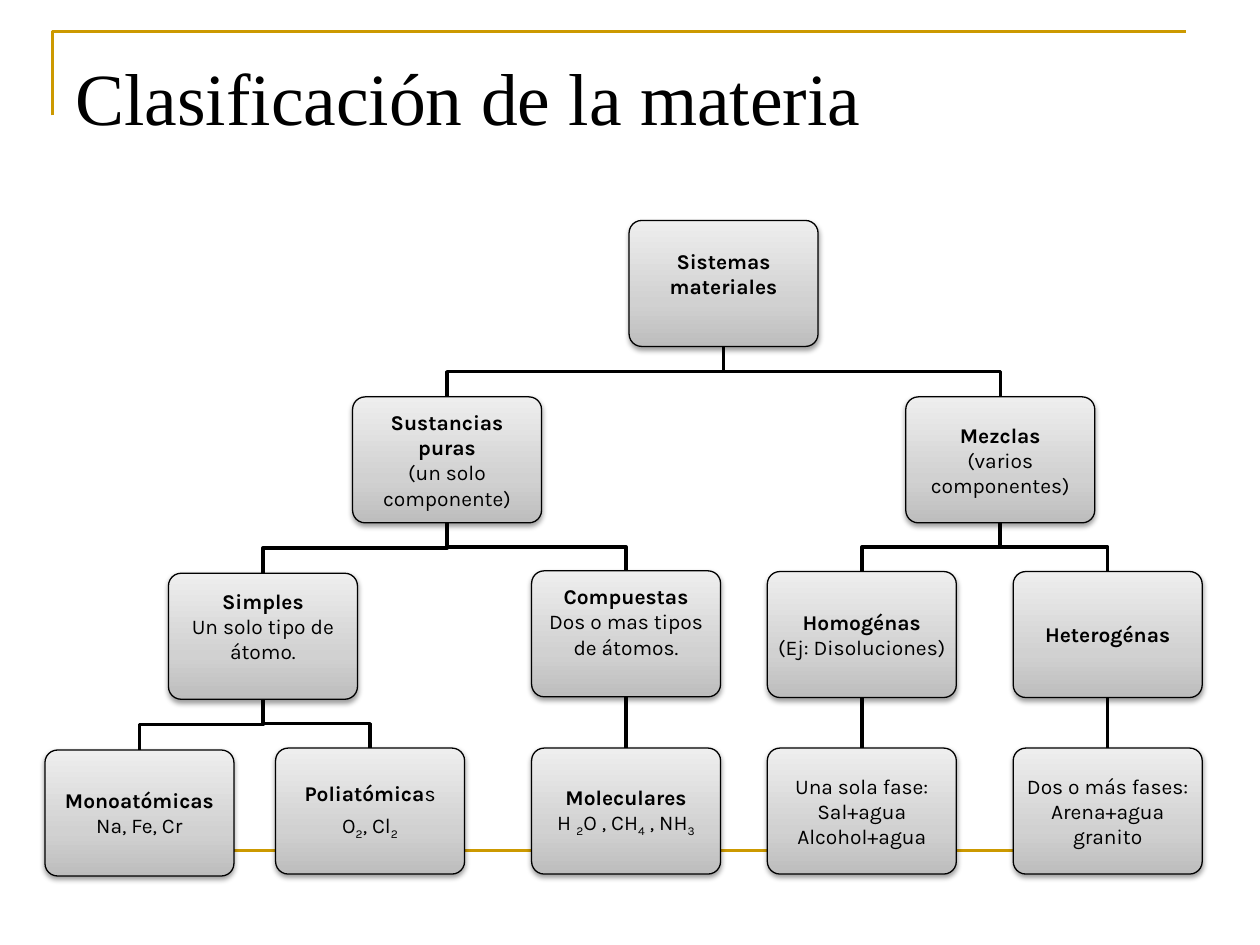
from lxml import etree
from pptx import Presentation
from pptx.dml.color import RGBColor
from pptx.enum.shapes import MSO_CONNECTOR, MSO_SHAPE
from pptx.enum.text import MSO_ANCHOR, PP_ALIGN
from pptx.oxml import parse_xml
from pptx.oxml.ns import nsdecls, qn
from pptx.util import Pt

STRAIGHT = MSO_CONNECTOR.STRAIGHT
ROUNDED = MSO_SHAPE.ROUNDED_RECTANGLE
MIDDLE = MSO_ANCHOR.MIDDLE
TOP = MSO_ANCHOR.TOP
CENTER = PP_ALIGN.CENTER

BLACK = RGBColor(0x00, 0x00, 0x00)
GOLD = RGBColor(0xCC, 0x99, 0x00)
GRAYS = [(0, RGBColor(0xBD, 0xBD, 0xBD)),
         (35, RGBColor(0xD1, 0xD1, 0xD1)),
         (100, RGBColor(0xEE, 0xEE, 0xEE))]

BOX_W, BOX_H = 108, 72
PAD = 3.6

# name: (parent, center x, top, lines, extra space below, spread lines)
# *...* marks bold text, _ puts the next character in subscript
TREE = {
    "sistemas": (None, 413.5, 126, ["*Sistemas materiales*"], 11.5, False),
    "puras": ("sistemas", 255.5, 226.8,
              ["*Sustancias puras*", "(un solo componente)"], 0, False),
    "simples": ("puras", 150.3, 327.6,
                ["*Simples*", "Un solo tipo de átomo."], 11.5, False),
    "monoatomicas": ("simples", 79.7, 428.6,
                     ["*Monoatómicas*", "Na, Fe, Cr"], 0, False),
    "poliatomicas": ("simples", 211.5, 427.5,
                     ["*Poliatómica*s", "O_2, Cl_2"], 0, True),
    "compuestas": ("puras", 357.8, 326.2,
                   ["*Compuestas*", "Dos o mas tipos de átomos."], 14, False),
    "moleculares": ("compuestas", 357.8, 427.5,
                    ["*Moleculares*", "H _2O , CH_4 , NH_3"], 0, False),
    "mezclas": ("sistemas", 571.6, 226.8,
                ["*Mezclas*", "(varios componentes)"], 0, False),
    "homogeneas": ("mezclas", 492.5, 326.6,
                   ["*Homogénas*", "(Ej: Disoluciones)"], 0, False),
    "una_fase": ("homogeneas", 492.5, 427.5,
                 ["Una sola fase:", "Sal+agua", "Alcohol+agua"], 0, False),
    "heterogeneas": ("mezclas", 633, 326.6, ["*Heterogénas*"], 0, False),
    "dos_fases": ("heterogeneas", 633, 427.5,
                  ["Dos o más fases:", "Arena+agua", "granito"], 0, False),
}


class Diagram:
    title_font = "Times New Roman"
    box_font = "Karla"

    def __init__(self, slide):
        self.slide = slide
        self.shapes = slide.shapes

    def line(self, points, color, width):
        """Straight connector for two points, open outline for more."""
        if len(points) == 2:
            ends = [Pt(v) for point in points for v in point]
            stroke = self.shapes.add_connector(STRAIGHT, *ends)
            etree.SubElement(stroke._element.spPr, qn("a:effectLst"))
        else:
            start, *rest = [(Pt(x), Pt(y)) for x, y in points]
            outline = self.shapes.build_freeform(*start)
            outline.add_line_segments(rest, close=False)
            stroke = outline.convert_to_shape()
            stroke.fill.background()
            stroke.shadow.inherit = False
        stroke.line.color.rgb = color
        stroke.line.width = Pt(width)

    def link(self, parent, child):
        """Branch from the bottom of one box to the top of another."""
        x1, y1 = parent[1], parent[2] + BOX_H
        x2, y2 = child[1], child[2]
        middle = (y1 + y2) / 2
        bend = [] if x1 == x2 else [(x1, middle), (x2, middle)]
        self.line([(x1, y1), *bend, (x2, y2)], BLACK, 2)

    def title(self, text, left, top, width, height):
        heading = self.shapes.add_textbox(Pt(left), Pt(top), Pt(width), Pt(height))
        frame = heading.text_frame
        frame.word_wrap = True
        frame.vertical_anchor = TOP
        frame.margin_top = Pt(8)
        paragraph = frame.paragraphs[0]
        paragraph.text = text
        paragraph.font.name = self.title_font
        paragraph.font.size = Pt(42)
        paragraph.font.color.rgb = BLACK

    def box(self, center, top, lines, space_below, spread):
        box = self.shapes.add_shape(ROUNDED, Pt(center - BOX_W / 2), Pt(top),
                                    Pt(BOX_W), Pt(BOX_H))
        box.adjustments[0] = 0.1
        self.shade(box)
        box.line.color.rgb = BLACK
        box.line.width = Pt(0.75)
        frame = box.text_frame
        frame.word_wrap = True
        frame.vertical_anchor = MIDDLE
        frame.margin_left = frame.margin_right = frame.margin_top = Pt(PAD)
        frame.margin_bottom = Pt(PAD + space_below)
        for i, text in enumerate(lines):
            paragraph = frame.add_paragraph() if i else frame.paragraphs[0]
            paragraph.alignment = CENTER
            paragraph.font.name = self.box_font
            paragraph.font.size = Pt(12)
            paragraph.font.color.rgb = BLACK
            if spread:
                paragraph.line_spacing = 0.9
                paragraph.space_after = Pt(4.2)
            self.runs(paragraph, text)

    def runs(self, paragraph, text):
        for i, part in enumerate(text.split("*")):
            plain, *subscripted = part.split("_")
            pieces = [(plain, False)]
            for piece in subscripted:
                pieces += [(piece[0], True), (piece[1:], False)]
            for piece, is_subscript in pieces:
                if not piece:
                    continue
                run = paragraph.add_run()
                run.text = piece
                run.font.bold = i % 2 == 1
                if is_subscript:
                    run._r.get_or_add_rPr().set("baseline", "-25000")

    def shade(self, box):
        """Upward gray gradient and a soft shadow below."""
        stops = "".join(
            f'<a:gs pos="{pos * 1000}"><a:srgbClr val="{color}"/></a:gs>'
            for pos, color in GRAYS)
        properties = box._element.spPr
        box.fill.background()
        properties.replace(properties.find(qn("a:noFill")), parse_xml(
            f'<a:gradFill {nsdecls("a")} rotWithShape="1"><a:gsLst>{stops}</a:gsLst>'
            '<a:lin ang="16200000" scaled="0"/></a:gradFill>'))
        box.shadow.inherit = False
        properties.find(qn("a:effectLst")).append(parse_xml(
            f'<a:outerShdw {nsdecls("a")} blurRad="{Pt(3.1)}" dist="{Pt(1.6)}" '
            'dir="5400000" rotWithShape="0"><a:srgbClr val="000000">'
            '<a:alpha val="38000"/></a:srgbClr></a:outerShdw>'))


def main():
    deck = Presentation()
    deck.slide_width, deck.slide_height = Pt(720), Pt(540)
    diagram = Diagram(deck.slides.add_slide(deck.slide_layouts[6]))

    # Gold frame and title
    diagram.line([(30, 66), (30, 18), (678, 18)], GOLD, 1.5)
    diagram.line([(36, 486), (684, 486)], GOLD, 1.5)
    diagram.title("Clasificación de la materia", 36, 21.6, 648, 90)

    # Classification tree
    for node in TREE.values():
        parent, *content = node
        if parent:
            diagram.link(TREE[parent], node)
        diagram.box(*content)

    deck.save("out.pptx")


if __name__ == "__main__":
    main()
